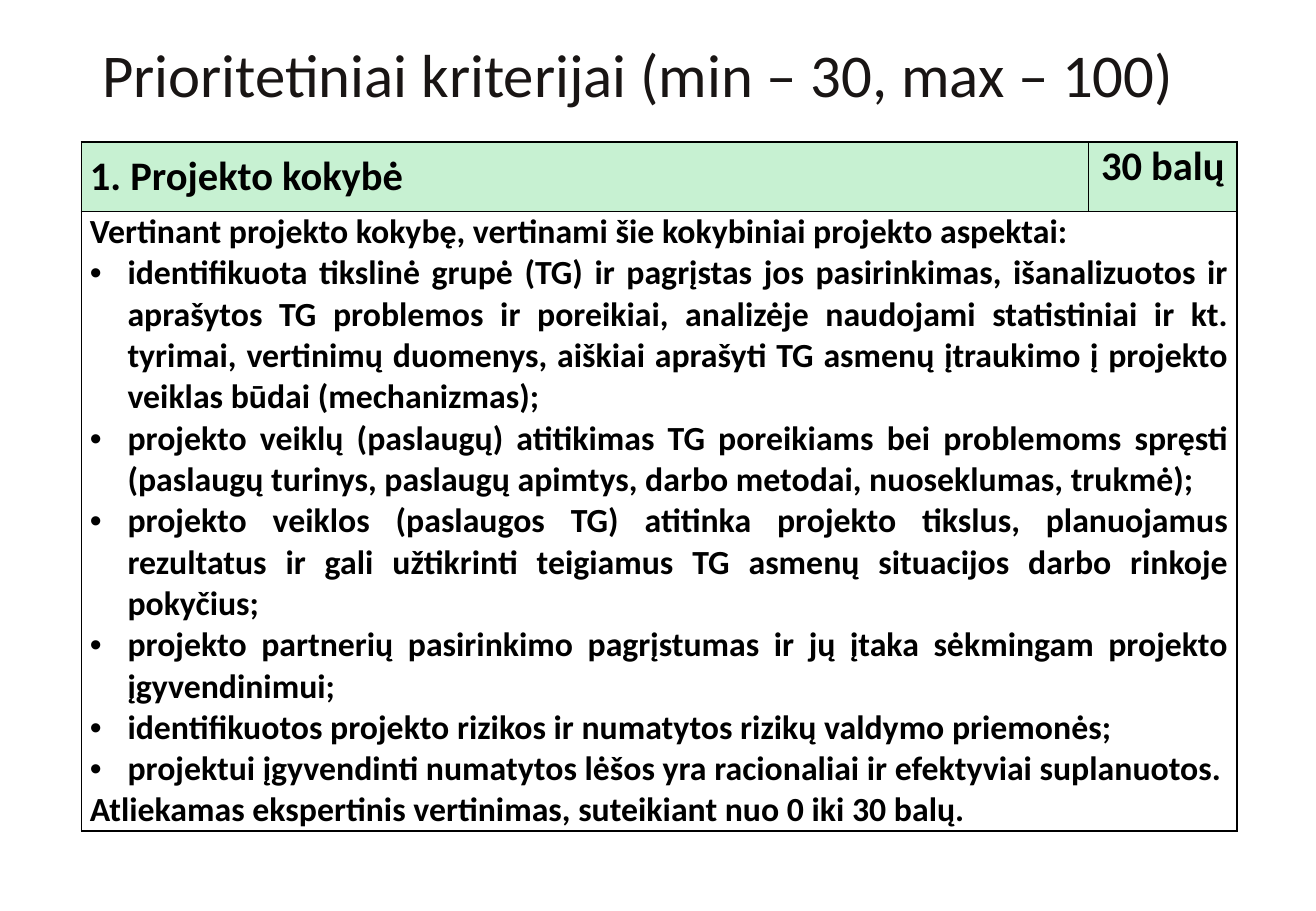
from pptx import Presentation
from pptx.dml.color import RGBColor
from pptx.enum.text import MSO_ANCHOR as Anchor, MSO_AUTO_SIZE as AutoSize, PP_ALIGN as Align
from pptx.oxml.ns import qn
from pptx.util import Pt
from lxml.etree import SubElement

EMU_PER_PX = 9144
FONT = "Calibri"
BLACK, INK, GREEN, WHITE = "000000", "191514", "C7F1D2", "FFFFFF"
INDENT = 31

INTRO = "Vertinant projekto kokybę, vertinami šie kokybiniai projekto aspektai:"
ASPECTS = [
    "identifikuota tikslinė grupė (TG) ir pagrįstas jos pasirinkimas, išanalizuotos ir aprašytos TG problemos "
    "ir poreikiai, analizėje naudojami statistiniai ir kt. tyrimai, vertinimų duomenys, aiškiai aprašyti TG "
    "asmenų įtraukimo į projekto veiklas būdai (mechanizmas);",
    "projekto veiklų (paslaugų) atitikimas TG poreikiams bei problemoms spręsti (paslaugų turinys, paslaugų "
    "apimtys, darbo metodai, nuoseklumas, trukmė);",
    "projekto veiklos (paslaugos TG) atitinka projekto tikslus, planuojamus rezultatus ir gali užtikrinti "
    "teigiamus TG asmenų situacijos darbo rinkoje pokyčius;",
    "projekto partnerių pasirinkimo pagrįstumas ir jų įtaka sėkmingam projekto įgyvendinimui;",
    "identifikuotos projekto rizikos ir numatytos rizikų valdymo priemonės;",
    "projektui įgyvendinti numatytos lėšos yra racionaliai ir efektyviai suplanuotos.",
]
CLOSING = "Atliekamas ekspertinis vertinimas, suteikiant nuo 0 iki 30 balų."


def px(length):
    return length * EMU_PER_PX


def color(value):
    return RGBColor.from_string(value)


def add_span(para, text, size, ink=BLACK, bold=False):
    span = para.add_run()
    span.text = text
    span.font.name = FONT
    span.font.size = Pt(size)
    span.font.bold = bold
    span.font.color.rgb = color(ink)


def add_bullet(para):
    props = para._p.get_or_add_pPr()
    props.set("marL", str(px(INDENT)))
    props.set("indent", str(-px(INDENT)))
    SubElement(props, qn("a:buFont"), typeface="Arial")
    SubElement(props, qn("a:buChar"), char="•")


def style_cell(cell, fill, inset, anchor=Anchor.TOP):
    cell.margin_left = cell.margin_right = px(7)
    cell.margin_top = cell.margin_bottom = px(inset)
    cell.vertical_anchor = anchor
    props = cell._tc.get_or_add_tcPr()
    for side in ("lnL", "lnR", "lnT", "lnB"):
        line = SubElement(props, qn(f"a:{side}"), w=str(Pt(1)))
        solid = SubElement(line, qn("a:solidFill"))
        SubElement(solid, qn("a:srgbClr"), val=BLACK)
    cell.fill.solid()
    cell.fill.fore_color.rgb = color(fill)


def add_title(page, left, top, width, height):
    title = page.shapes.title
    title.left, title.top, title.width, title.height = map(px, (left, top, width, height))
    frame = title.text_frame
    frame.auto_size = AutoSize.NONE
    frame.word_wrap = True
    frame.vertical_anchor = Anchor.MIDDLE
    para = frame.paragraphs[0]
    para.alignment = Align.LEFT
    para.line_spacing = 0.9
    add_span(para, "Prioritetiniai kriterijai (min – 30, max – 100)", 36, INK)


def fill_aspects(frame):
    texts = [INTRO, *ASPECTS, CLOSING]
    for index, text in enumerate(texts):
        para = frame.add_paragraph() if index else frame.paragraphs[0]
        para.alignment = Align.JUSTIFY
        if text in ASPECTS:
            add_bullet(para)
        add_span(para, text, 20, bold=True)


def add_criteria(page, left, top, width, height):
    score_width, header_height = 122, 57
    table = page.shapes.add_table(2, 2, *map(px, (left, top, width, height))).table
    table.first_row = table.horz_banding = False
    table.columns[0].width = px(width - score_width)
    table.columns[1].width = px(score_width)
    table.rows[0].height = px(header_height)
    table.rows[1].height = px(height - header_height)

    name, score = table.cell(0, 0), table.cell(0, 1)
    style_cell(name, GREEN, 8, Anchor.MIDDLE)
    add_span(name.text_frame.paragraphs[0], "1. Projekto kokybė", 24, bold=True)
    style_cell(score, GREEN, 4, Anchor.MIDDLE)
    para = score.text_frame.paragraphs[0]
    para.alignment = Align.CENTER
    para.line_spacing = Pt(18)
    add_span(para, "30 balų", 24, bold=True)

    aspects = table.cell(1, 0)
    aspects.merge(table.cell(1, 1))
    for cell in (aspects, table.cell(1, 1)):
        style_cell(cell, WHITE, 0)
    fill_aspects(aspects.text_frame)


def main():
    deck = Presentation()
    deck.slide_width, deck.slide_height = px(1083), px(750)
    page = deck.slides.add_slide(deck.slide_layouts[5])
    page.background.fill.solid()
    page.background.fill.fore_color.rgb = color(WHITE)
    add_title(page, 74, 35, 934, 59)
    add_criteria(page, 67, 117, 951, 567)
    deck.save("out.pptx")


if __name__ == "__main__":
    main()
